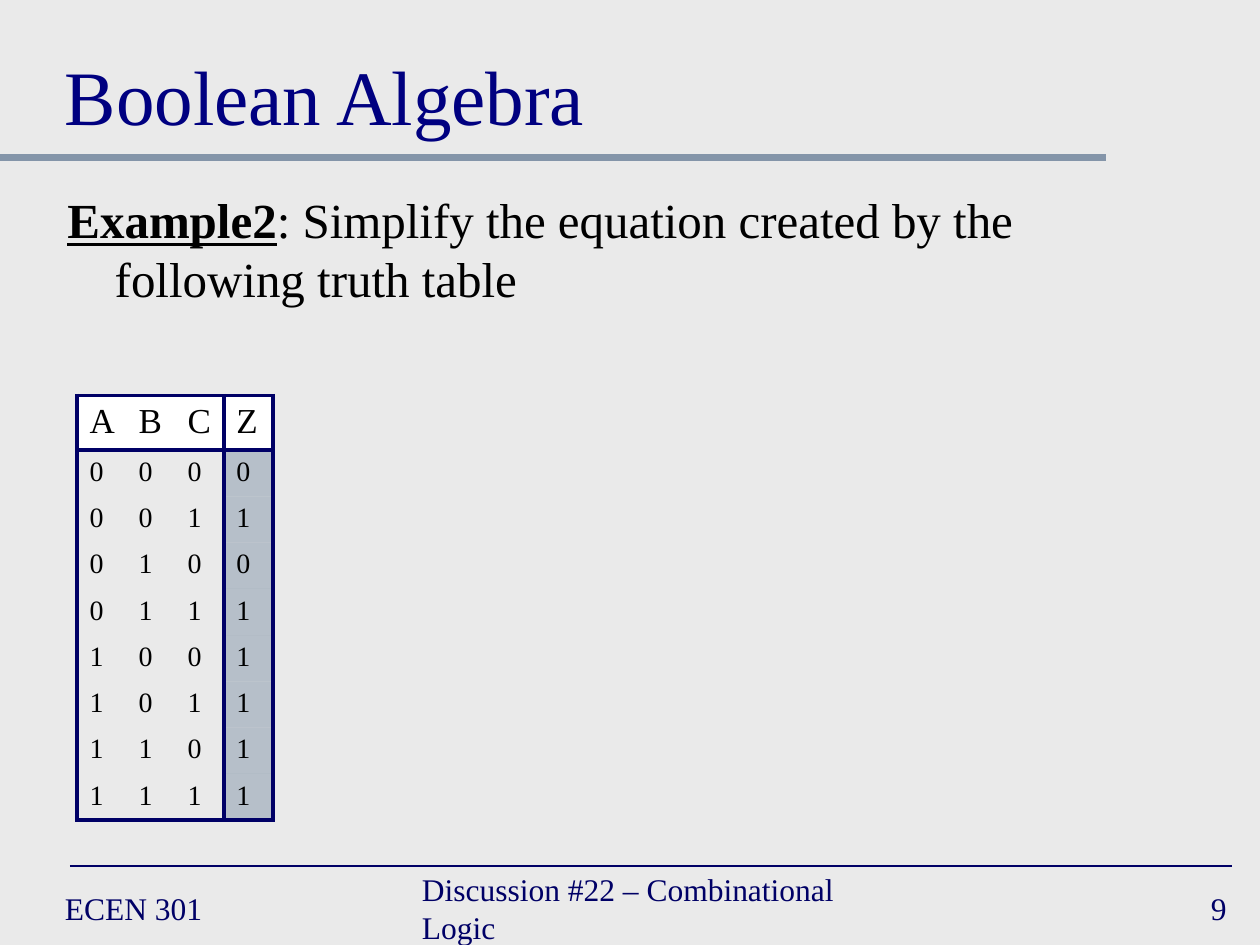
from lxml import etree
from pptx import Presentation, util as u
from pptx.dml.color import RGBColor
from pptx.enum import shapes, text
from pptx.oxml import ns

NAVY, TITLE_BLUE, SLATE = "000066", "000080", "8495A9"
BLACK, WHITE, PAPER = "000000", "FFFFFF", "EAEAEA"
COLUMNS, ROWS = 120, 90
TRUTH_TABLE = ["ABCZ", "0000", "0011", "0100", "0111",
               "1001", "1011", "1101", "1111"]


def color(value):
    return RGBColor.from_string(value)


def set_all(target, **values):
    for name, value in values.items():
        setattr(target, name, value)


def add_xml(parent, tag, **attributes):
    return etree.SubElement(parent, ns.qn(tag), attributes)


class SlideBuilder:
    """Places elements on a grid of COLUMNS by ROWS."""
    font_name = "Times New Roman"
    border_width = u.Pt(2.25)

    def __init__(self, presentation):
        self.column = presentation.slide_width / COLUMNS
        self.row = presentation.slide_height / ROWS
        self.slide = presentation.slides.add_slide(presentation.slide_layouts[6])
        fill = self.slide.background.fill
        fill.solid()
        fill.fore_color.rgb = color(PAPER)

    def place(self, *lengths):
        """Turn alternating column and row counts into EMU."""
        return [u.Emu(round(length * (self.row if index % 2 else self.column)))
                for index, length in enumerate(lengths)]

    def rule(self, left, right, row, ink, width):
        line = self.slide.shapes.add_connector(
            shapes.MSO_CONNECTOR.STRAIGHT, *self.place(left, row, right, row))
        line.line.color.rgb = color(ink)
        line.line.width = u.Pt(width)
        add_xml(line._element.spPr, "a:effectLst")

    def run(self, paragraph, content, size, ink, **style):
        run = paragraph.add_run()
        run.text = content
        set_all(run.font, name=self.font_name, size=u.Pt(size), **style)
        run.font.color.rgb = color(ink)

    def text_box(self, box, runs, size, ink, anchor=text.MSO_ANCHOR.TOP,
                 wrap=True, align=text.PP_ALIGN.LEFT, hanging=0):
        """Add one paragraph of (text, style) runs; hanging is in columns."""
        frame = self.slide.shapes.add_textbox(*self.place(*box)).text_frame
        set_all(frame, word_wrap=wrap, vertical_anchor=anchor)
        paragraph = frame.paragraphs[0]
        paragraph.alignment = align
        if hanging:
            indent = round(hanging * self.column)
            properties = paragraph._p.get_or_add_pPr()
            properties.set("marL", str(indent))
            properties.set("indent", str(-indent))
        for content, style in runs:
            self.run(paragraph, content, size, ink, **style)

    def borders(self, cell, drawn):
        """Draw the sides named in drawn (of L, R, T, B) and clear the others."""
        properties = cell._tc.get_or_add_tcPr()
        for side in "LRTB":
            line = add_xml(properties, f"a:ln{side}", w=str(self.border_width))
            if side in drawn:
                fill = add_xml(line, "a:solidFill")
                add_xml(fill, "a:srgbClr", val=NAVY)
            else:
                add_xml(line, "a:noFill")

    def fill_cell(self, cell, ink, opacity=100):
        cell.fill.solid()
        cell.fill.fore_color.rgb = color(ink)
        if opacity < 100:
            shade = cell._tc.tcPr.find(".//" + ns.qn("a:solidFill"))
            solid = cell._tc.tcPr.findall(ns.qn("a:solidFill"))[-1]
            add_xml(solid[0], "a:alpha", val=str(opacity * 1000))

    def truth_table(self, box, values, header_height):
        left, top, width, height = self.place(*box)
        table = self.slide.shapes.add_table(
            len(values), len(values[0]), left, top, width, height).table
        set_all(table, first_row=False, horz_banding=False)
        header = round(header_height * self.row)
        last_row, output = len(values) - 1, len(values[0]) - 1
        for i, line in enumerate(values):
            table.rows[i].height = u.Emu(
                round((height - header) / last_row) if i else header)
            for j, value in enumerate(line):
                cell = table.cell(i, j)
                self.run(cell.text_frame.paragraphs[0], value,
                         16 if i else 20, BLACK)
                sides = {"L": j in (0, output), "R": j >= output - 1,
                         "T": i < 2, "B": i in (0, last_row)}
                self.borders(cell, [side for side in sides if sides[side]])
                if i == 0:
                    self.fill_cell(cell, WHITE)
                elif j == output:
                    self.fill_cell(cell, SLATE, opacity=50)
                else:
                    cell.fill.background()


def main():
    presentation = Presentation()
    set_all(presentation, slide_width=u.Inches(10), slide_height=u.Inches(7.5))
    builder = SlideBuilder(presentation)

    builder.rule(0, 105.33, 15, SLATE, 4)
    builder.rule(6.67, 117.33, 82.5, NAVY, 1)

    left, right = text.PP_ALIGN.LEFT, text.PP_ALIGN.RIGHT
    for column, width, content, align in [
            (5, 26, "ECEN 301", left),
            (39, 46, "Discussion #22 – Combinational Logic", left),
            (93, 25, "9", right)]:
        builder.text_box((column, 84, width, 5), [(content, {})], 18, NAVY,
                         text.MSO_ANCHOR.MIDDLE, wrap=False, align=align)

    builder.text_box((5, 2, 110, 12), [("Boolean Algebra", {})], 44, TITLE_BLUE,
                     text.MSO_ANCHOR.BOTTOM)
    builder.text_box(
        (5.25, 17.5, 109.75, 14.5),
        [("Example2", {"bold": True, "underline": True}),
         (": Simplify the equation created by the following truth table", {})],
        28, BLACK, hanging=4.5)
    builder.truth_table((7.33, 37.67, 18.67, 38.22), TRUTH_TABLE, 4.9)

    presentation.save("out.pptx")


if __name__ == "__main__":
    main()
